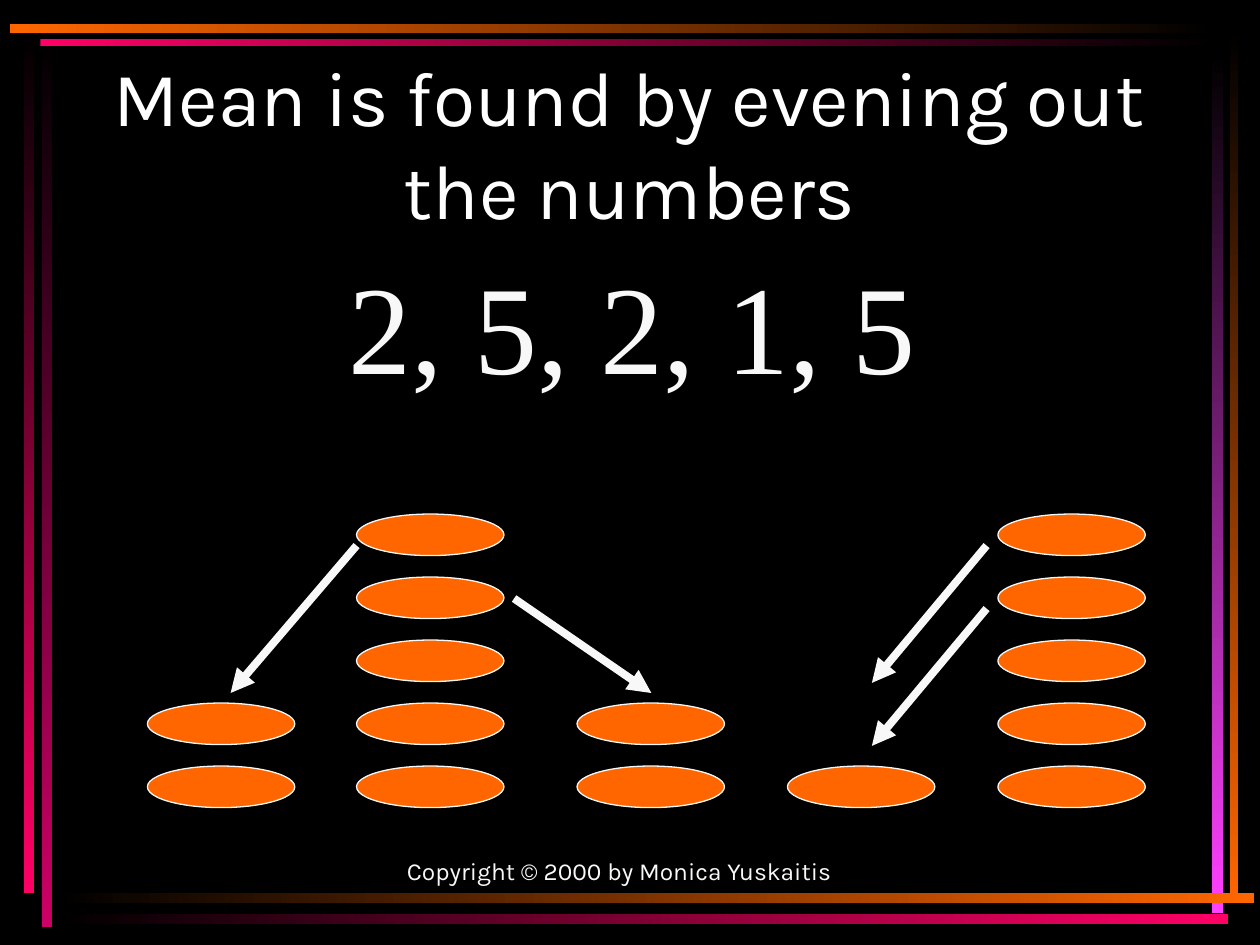
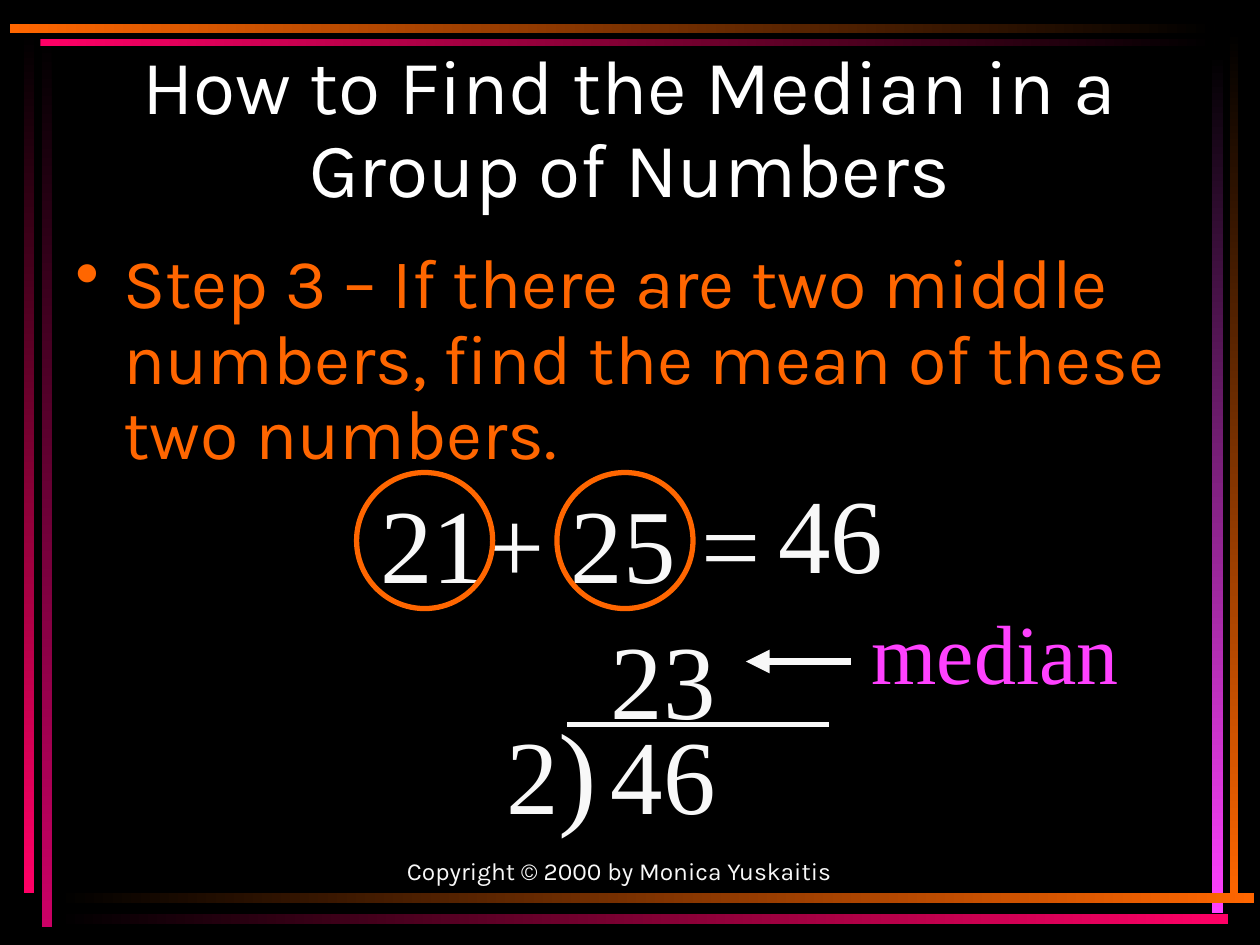
"""Build two slides on the mean and the median inside a shared neon frame."""
from lxml import etree
from pptx import Presentation
from pptx.dml.color import RGBColor
from pptx.enum.shapes import MSO_CONNECTOR, MSO_SHAPE
from pptx.enum.text import MSO_ANCHOR, MSO_AUTO_SIZE, PP_ALIGN
from pptx.oxml.ns import qn
from pptx.util import Inches, Pt

RECTANGLE, OVAL = MSO_SHAPE.RECTANGLE, MSO_SHAPE.OVAL
STRAIGHT = MSO_CONNECTOR.STRAIGHT
TOP, BOTTOM = MSO_ANCHOR.TOP, MSO_ANCHOR.BOTTOM
LEFT, CENTER = PP_ALIGN.LEFT, PP_ALIGN.CENTER
FIT, FIXED = MSO_AUTO_SIZE.SHAPE_TO_FIT_TEXT, MSO_AUTO_SIZE.NONE

COLORS = {
    "black": "000000", "white": "FFFFFF", "chalk": "F8F8F8", "orange": "FF6600",
    "pink": "FF0066", "berry": "CC0066", "violet": "FF41FF",
}
SANS, SERIF = "Karla", "Times New Roman"
DOWN, ACROSS = 270, 0
FRAME = [
    (0.33, 0.28, 0.08, 7.08, "black", "berry", DOWN),
    (0.19, 0.25, 0.08, 6.84, "black", "pink", DOWN),
    (9.76, 0.24, 0.07, 6.93, "black", "orange", DOWN),
    (9.62, 0.42, 0.09, 6.83, "black", "violet", DOWN),
    (0.45, 7.09, 9.5, 0.08, "black", "orange", ACROSS),
    (0.45, 7.25, 9.3, 0.08, "black", "pink", ACROSS),
    (0.32, 0.31, 9.32, 0.06, "pink", "black", ACROSS),
    (0.08, 0.19, 9.56, 0.07, "orange", "black", ACROSS),
]
COPYRIGHT = "Copyright © 2000 by Monica Yuskaitis"


def rgb(name):
    return RGBColor.from_string(COLORS[name])


def inches(*lengths):
    return [Inches(length) for length in lengths]


class Deck:
    """Hold the shared style and the current slide."""

    def __init__(self):
        self.prs = Presentation()
        self.prs.slide_width, self.prs.slide_height = inches(10, 7.5)
        self.slide = None

    def new_slide(self, title, title_top, line_spacing=1.0):
        self.slide = self.prs.slides.add_slide(self.prs.slide_layouts[6])
        backdrop = self.slide.background.fill
        backdrop.solid()
        backdrop.fore_color.rgb = rgb("black")
        for band in FRAME:
            self.band(*band)
        self.text((3.08, 6.58, 3.67, 0.5), [(COPYRIGHT, 14)], "chalk",
                  anchor=BOTTOM, align=CENTER)
        self.text((0.75, title_top, 8.5, 1.08), [(title, 44)], "white",
                  anchor=BOTTOM, align=CENTER, line_spacing=line_spacing)

    def shape(self, kind, box):
        shape = self.slide.shapes.add_shape(kind, *inches(*box))
        shape.shadow.inherit = False
        return shape

    def band(self, left, top, width, height, start, end, angle):
        band = self.shape(RECTANGLE, (left, top, width, height))
        band.line.fill.background()
        band.fill.gradient()
        band.fill.gradient_angle = angle
        for stop, color in zip(band.fill.gradient_stops, (start, end)):
            stop.color.rgb = rgb(color)

    def oval(self, box, line, weight, fill=None):
        oval = self.shape(OVAL, box)
        if fill:
            oval.fill.solid()
            oval.fill.fore_color.rgb = rgb(fill)
        else:
            oval.fill.background()
        oval.line.color.rgb = rgb(line)
        oval.line.width = Pt(weight)

    def line(self, start, end, weight, arrow=False):
        line = self.slide.shapes.add_connector(STRAIGHT, *inches(*start, *end))
        line.line.color.rgb = rgb("chalk")
        line.line.width = Pt(weight)
        if arrow:
            etree.SubElement(line.line._get_or_add_ln(), qn("a:tailEnd"), type="triangle")
        etree.SubElement(line._element.spPr, qn("a:effectLst"))

    def text(self, box, runs, color, font=SANS, anchor=TOP, align=LEFT,
             line_spacing=1.0, wrap=True, size_rule=FIXED, bullet=False):
        frame = self.slide.shapes.add_textbox(*inches(*box)).text_frame
        frame_format = {"word_wrap": wrap, "auto_size": size_rule, "vertical_anchor": anchor}
        for key, value in frame_format.items():
            setattr(frame, key, value)
        paragraph = frame.paragraphs[0]
        paragraph.alignment, paragraph.line_spacing = align, line_spacing
        if bullet:
            self.bullet(paragraph, color)
        for words, size in runs:
            run = paragraph.add_run()
            run.text = words
            for key, value in {"name": font, "size": Pt(size)}.items():
                setattr(run.font, key, value)
            run.font.color.rgb = rgb(color)

    def bullet(self, paragraph, color):
        props = paragraph._p.get_or_add_pPr()
        props.set("marL", str(Inches(0.38)))
        props.set("indent", str(Inches(-0.38)))
        tint = etree.SubElement(props, qn("a:buClr"))
        etree.SubElement(tint, qn("a:srgbClr"), val=COLORS[color])
        etree.SubElement(props, qn("a:buChar"), char="•")

    def number(self, box, *runs, color="chalk"):
        self.text(box, runs, color, font=SERIF, wrap=False, size_rule=FIT)


def mean_slide(deck):
    deck.new_slide("Mean is found by evening out the numbers", 0.83)
    deck.number((2.67, 1.92, 4.7, 1.7), ("2, 5, 2, 1, 5", 72))
    stacks = [(1.17, 2), (2.83, 5), (4.58, 2), (6.25, 1), (7.92, 5)]
    for left, count in stacks:
        for level in range(count):
            deck.oval((left, 6.08 - 0.5 * level, 1.17, 0.33), "chalk", 0.75, fill="orange")
    moves = [
        ((2.83, 4.33), (1.83, 5.5)),
        ((4.08, 4.75), (5.17, 5.5)),
        ((7.83, 4.83), (6.92, 5.92)),
        ((7.83, 4.33), (6.92, 5.42)),
    ]
    for start, end in moves:
        deck.line(start, end, 4.5, arrow=True)


def median_slide(deck):
    deck.new_slide("How to Find the Median in a Group of Numbers", 0.67, line_spacing=0.9)
    step = "Step 3 – If there are two middle numbers, find the mean of these two numbers."
    deck.text((0.5, 1.92, 8.92, 1.58), [(step, 40)], "orange", line_spacing=0.9, bullet=True)
    deck.number((2.92, 3.75, 3.25, 1.1), ("21+ 25 =", 60))
    for left in (2.83, 4.42):
        deck.oval((left, 3.75, 1.08, 1.08), "orange", 3)
    deck.number((6.08, 3.67, 1.24, 1.1), ("46", 60))
    deck.number((3.92, 5.5, 0.92, 1.2), ("2", 60), (")", 66))
    deck.line((4.5, 5.75), (6.58, 5.75), 3)
    deck.number((4.75, 5.58, 1.24, 1.1), ("46", 60))
    deck.number((4.75, 4.83, 1.03, 1.1), ("23", 60))
    deck.line((6.75, 5.25), (5.92, 5.25), 4.5, arrow=True)
    deck.number((6.82, 4.72, 2.16, 0.9), ("median", 48), color="violet")


def main():
    deck = Deck()
    mean_slide(deck)
    median_slide(deck)
    deck.prs.save("out.pptx")


if __name__ == "__main__":
    main()
